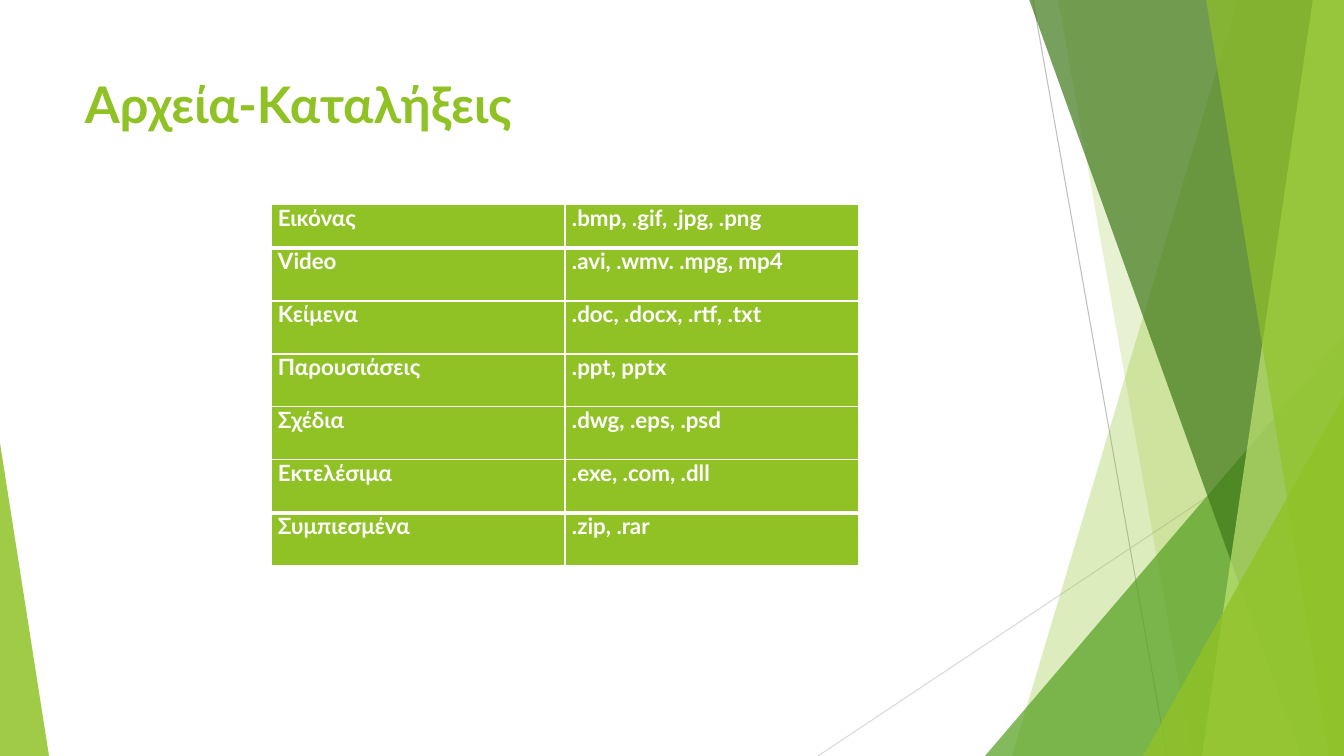
from lxml import etree
from pptx import Presentation
from pptx.dml.color import RGBColor
from pptx.enum.shapes import MSO_CONNECTOR, MSO_SHAPE
from pptx.enum.text import MSO_ANCHOR, PP_ALIGN
from pptx.oxml import parse_xml
from pptx.oxml.ns import nsdecls, qn
from pptx.util import Pt

STRAIGHT = MSO_CONNECTOR.STRAIGHT
TRIANGLE = MSO_SHAPE.ISOSCELES_TRIANGLE
TOP = MSO_ANCHOR.TOP
LEFT, JUSTIFY = PP_ALIGN.LEFT, PP_ALIGN.JUSTIFY

EMU_PER_PX = 914400 / 100.8
WIDTH, HEIGHT = 1344, 756
GREEN, WHITE = "90C226", "FFFFFF"
THIN, THICK = 1, 3

FILE_TYPES = [
    ("Εικόνας", ".bmp, .gif, .jpg, .png"),
    ("Video", ".avi, .wmv. .mpg, mp4"),
    ("Κείμενα", ".doc, .docx, .rtf, .txt"),
    ("Παρουσιάσεις", ".ppt, pptx"),
    ("Σχέδια", ".dwg, .eps, .psd"),
    ("Εκτελέσιμα", ".exe, .com, .dll"),
    ("Συμπιεσμένα", ".zip, .rar"),
]


def px(length):
    return round(length * EMU_PER_PX)


def rgb(code):
    return RGBColor.from_string(code)


def apply(target, values):
    for name, value in values.items():
        setattr(target, name, value)


class FacetSlide:
    """Draws the elements of one slide in a shared green style."""

    font_format = {"name": "Lato", "bold": True}
    cell_format = {"margin_left": px(7), "margin_right": px(7), "margin_top": 0,
                   "margin_bottom": 0, "vertical_anchor": TOP}
    table_format = {"first_row": False, "horz_banding": False}
    title_format = {"word_wrap": True, "vertical_anchor": TOP}

    def __init__(self, slide):
        self.slide = slide
        self.shapes = slide.shapes
        slide.background.fill.solid()
        slide.background.fill.fore_color.rgb = rgb(WHITE)

    def line(self, start, end, color):
        ray = self.shapes.add_connector(STRAIGHT, *map(px, start + end))
        ray.line.color.rgb = rgb(color)
        ray.line.width = Pt(0.75)
        etree.SubElement(ray._element.spPr, qn("a:effectLst"))

    def paint(self, facet, color, opacity):
        facet.shadow.inherit = False
        facet.line.fill.background()
        facet.fill.solid()
        facet.fill.fore_color.rgb = rgb(color)
        tint = facet._element.spPr.find(qn("a:solidFill"))[0]
        etree.SubElement(tint, qn("a:alpha"), val=str(opacity * 1000))

    def panel(self, top_left, bottom_left, color, opacity):
        outline = self.shapes.build_freeform(px(top_left), px(-1))
        corners = [(WIDTH, -1), (WIDTH, HEIGHT), (bottom_left, HEIGHT)]
        outline.add_line_segments([(px(x), px(y)) for x, y in corners])
        self.paint(outline.convert_to_shape(), color, opacity)

    def triangle(self, left, top, width, apex, color, opacity):
        facet = self.shapes.add_shape(
            TRIANGLE, *map(px, (left, top, width, HEIGHT - top)))
        facet.adjustments[0] = apex
        self.paint(facet, color, opacity)

    def label(self, frame, text, size, color, alignment):
        paragraph = frame.paragraphs[0]
        paragraph.alignment = alignment
        run = paragraph.add_run()
        run.text = text
        apply(run.font, {**self.font_format, "size": Pt(size)})
        run.font.color.rgb = rgb(color)

    def title(self, text, left, top, width, height):
        heading = self.shapes.add_textbox(*map(px, (left, top, width, height)))
        apply(heading.text_frame, self.title_format)
        self.label(heading.text_frame, text, 36, GREEN, LEFT)

    def borders(self, cell, top, bottom):
        properties = cell._tc.get_or_add_tcPr()
        sides = {"lnL": THIN, "lnR": THIN, "lnT": top, "lnB": bottom}
        for position, (side, weight) in enumerate(sides.items()):
            properties.insert(position, parse_xml(
                f'<a:{side} {nsdecls("a")} w="{Pt(weight)}"><a:solidFill>'
                f'<a:srgbClr val="{WHITE}"/></a:solidFill></a:{side}>'))

    def table(self, rows, left, top, column_width, first_height, row_height):
        heights = [first_height] + [row_height] * (len(rows) - 1)
        columns = len(rows[0])
        table = self.shapes.add_table(
            len(rows), columns, px(left), px(top),
            px(column_width * columns), px(sum(heights))).table
        apply(table, self.table_format)
        for column in table.columns:
            column.width = px(column_width)
        weights = [THIN, THICK] + [THIN] * (len(rows) - 3) + [THICK, THIN]
        for index, (texts, height) in enumerate(zip(rows, heights)):
            table.rows[index].height = px(height)
            for cell, text in zip(table.rows[index].cells, texts):
                apply(cell, self.cell_format)
                cell.fill.solid()
                cell.fill.fore_color.rgb = rgb(GREEN)
                self.borders(cell, weights[index], weights[index + 1])
                self.label(cell.text_frame, text, 16, WHITE, JUSTIFY)


def main():
    deck = Presentation()
    apply(deck, {"slide_width": px(WIDTH), "slide_height": px(HEIGHT)})
    page = FacetSlide(deck.slides.add_slide(deck.slide_layouts[6]))
    page.line((1033, 0), (1167, HEIGHT), "BFBFBF")
    page.line((WIDTH, 406), (818, HEIGHT), "D9D9D9")
    page.panel(1238, 1012, GREEN, 30)
    page.panel(1058, 1192, GREEN, 20)
    page.triangle(985, 336, 359, 1, "54A021", 72)
    page.panel(1029, 1301, "3F7819", 70)
    page.panel(1313, 1202, "C0E474", 70)
    page.panel(1206, 1329, GREEN, 65)
    page.triangle(1143, 396, 201, 1, GREEN, 80)
    page.triangle(0, 443, 49, 0, GREEN, 85)
    page.title("Αρχεία-Καταλήξεις", 75, 68, 948, 145)
    page.table(FILE_TYPES, 271, 204, 294, 44, 53)
    deck.save("out.pptx")


if __name__ == "__main__":
    main()
